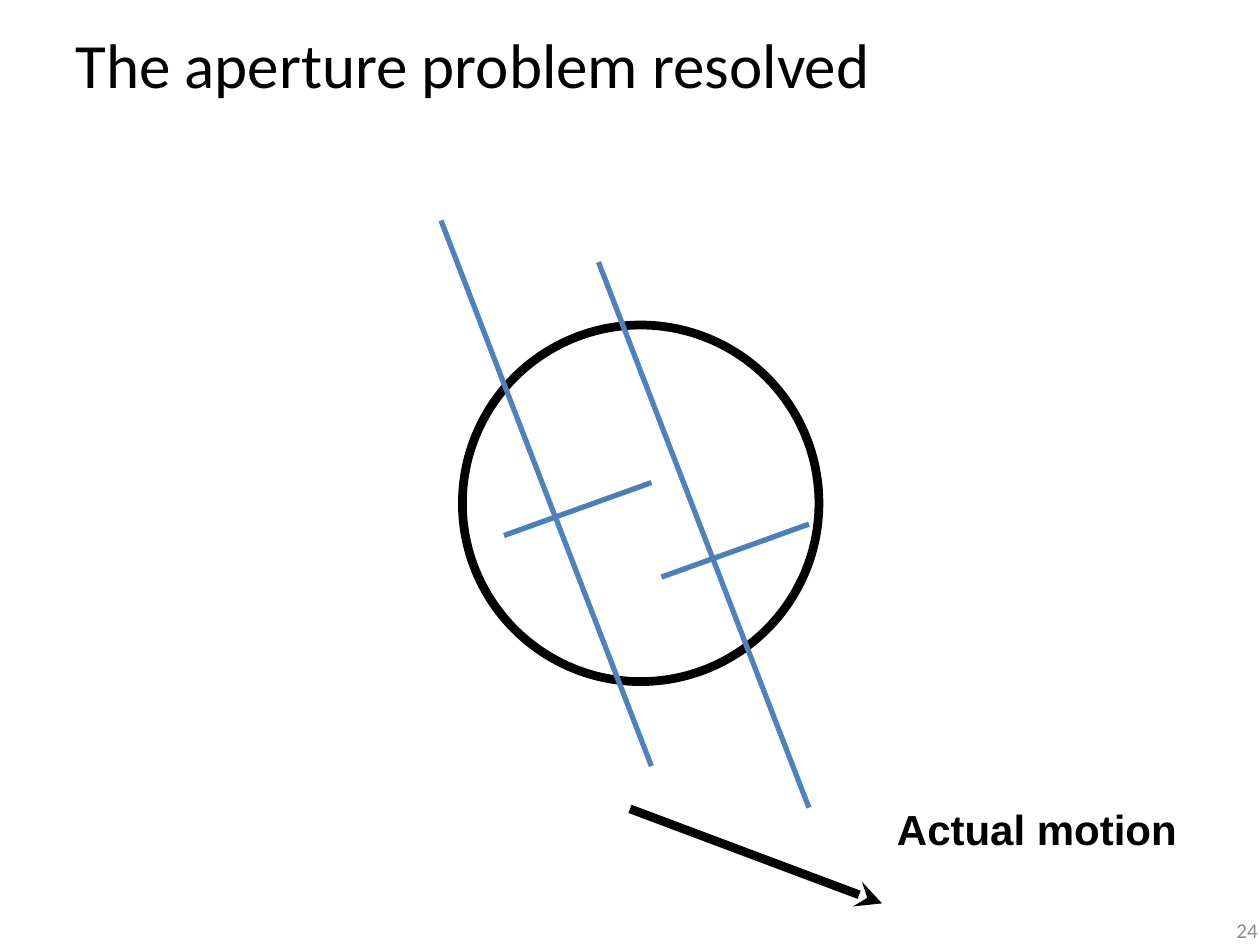
import pptx
import pptx.dml.color
import pptx.enum.shapes
import pptx.enum.text
import pptx.oxml
import pptx.oxml.ns
import pptx.util
from pptx.util import Inches

ALIGN = pptx.enum.text.PP_ALIGN
ANCHOR = pptx.enum.text.MSO_ANCHOR


def color(value):
    return pptx.dml.color.RGBColor.from_string(value)


def element(tag, **attributes):
    node = pptx.oxml.parse_xml(f"<a:{tag} {pptx.oxml.ns.nsdecls('a')}/>")
    for name, value in attributes.items():
        node.set(name, value)
    return node


class SlideBuilder:
    black = "000000"
    gray = "8C8C8C"
    bar_blue = "4F81BD"
    tick_blue = "4B7EBC"
    heading_font = "Calibri"
    label_font = "Arial"
    heavy = 5
    medium = 3

    def __init__(self, slide):
        self.slide = slide

    def text(self, words, left, top, width, height, size, font, ink=black,
             bold=False, align=ALIGN.LEFT, anchor=ANCHOR.MIDDLE, wrap=True):
        shape = self.slide.shapes.add_textbox(
            Inches(left), Inches(top), Inches(width), Inches(height))
        frame = shape.text_frame
        frame.word_wrap = wrap
        frame.vertical_anchor = anchor
        paragraph = frame.paragraphs[0]
        paragraph.text = words
        paragraph.alignment = align
        paragraph.font.size = pptx.util.Pt(size)
        paragraph.font.name = font
        paragraph.font.bold = bold
        paragraph.font.color.rgb = color(ink)

    def circle(self, left, top, diameter):
        shape = self.slide.shapes.add_shape(
            pptx.enum.shapes.MSO_SHAPE.OVAL,
            Inches(left), Inches(top), Inches(diameter), Inches(diameter))
        shape.shadow.inherit = False
        shape.fill.background()
        shape.line.color.rgb = color(self.black)
        shape.line.width = pptx.util.Pt(self.heavy)

    def line(self, start, end, ink, weight, arrow=False, shapes=None):
        shapes = self.slide.shapes if shapes is None else shapes
        connector = shapes.add_connector(
            pptx.enum.shapes.MSO_CONNECTOR.STRAIGHT,
            *map(Inches, start), *map(Inches, end))
        connector.line.color.rgb = color(ink)
        connector.line.width = pptx.util.Pt(weight)
        if arrow:
            connector.line._get_or_add_ln().append(element("tailEnd", type="stealth"))
        connector._element.spPr.append(element("effectLst"))

    def crossed_bar(self, left, top):
        shapes = self.slide.shapes.add_group_shape().shapes
        self.line((left, top), (left + 1.67, top + 4.33),
                  self.bar_blue, self.medium, shapes=shapes)
        self.line((left + 0.5, top + 2.5), (left + 1.67, top + 2.08),
                  self.tick_blue, self.medium, shapes=shapes)


def main():
    presentation = pptx.Presentation()
    presentation.slide_width = Inches(10)
    presentation.slide_height = Inches(7.5)
    builder = SlideBuilder(presentation.slides.add_slide(presentation.slide_layouts[6]))

    builder.text("The aperture problem resolved", 0.5, 0, 9, 1, 36, builder.heading_font)
    builder.circle(3.67, 2.58, 2.83)
    builder.line((5, 6.42), (7, 7.17), builder.black, builder.heavy, arrow=True)
    builder.text("Actual motion", 7.02, 6.33, 2.42, 0.5, 24, builder.label_font,
                 bold=True, anchor=ANCHOR.TOP, wrap=False)
    for left, top in ((3.5, 1.75), (4.75, 2.08)):
        builder.crossed_bar(left, top)
    builder.text("24", 7.75, 7.18, 2.33, 0.4, 12, builder.heading_font,
                 ink=builder.gray, align=ALIGN.RIGHT)

    presentation.save("out.pptx")


if __name__ == "__main__":
    main()
